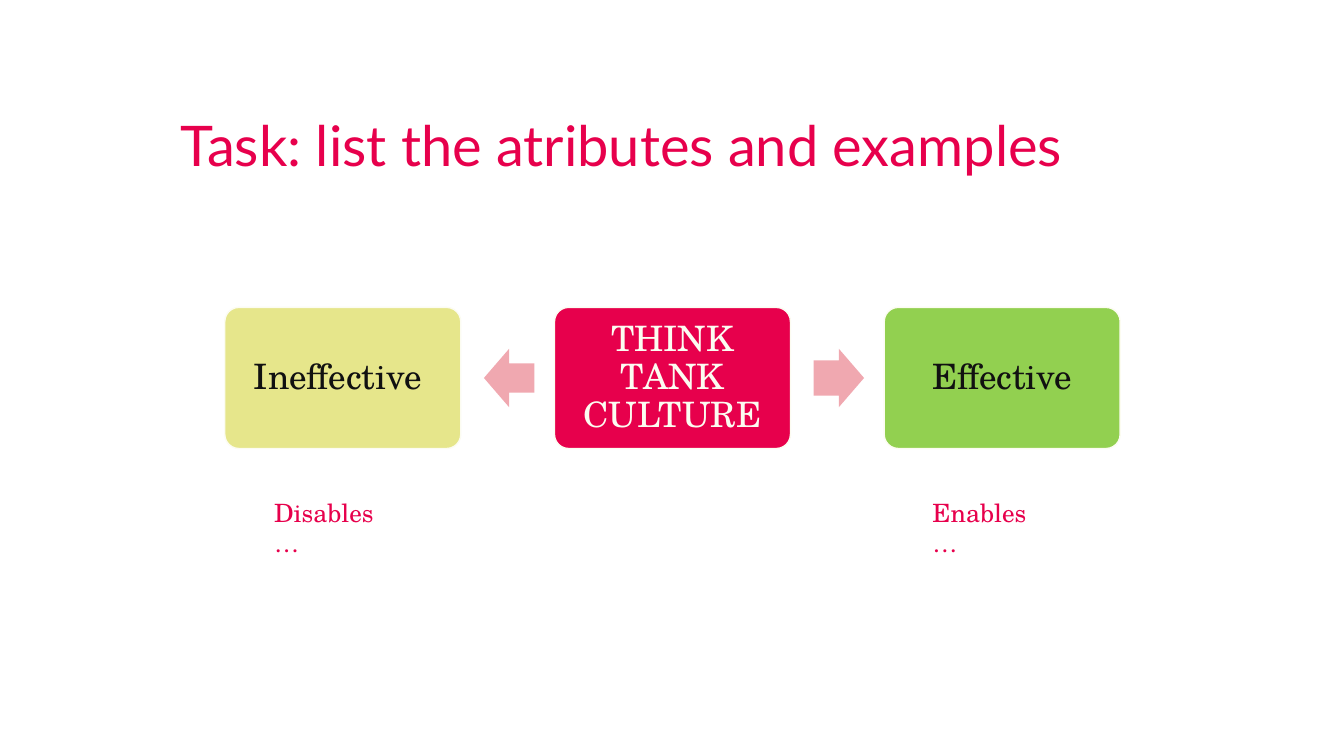
"""Build the think tank culture task slide."""
from pptx import Presentation
from pptx.dml.color import RGBColor
from pptx.enum.shapes import MSO_SHAPE
from pptx.enum.text import MSO_ANCHOR, PP_ALIGN
from pptx.util import Inches, Pt

CRIMSON = RGBColor(0xE7, 0x00, 0x4C)
PINK = RGBColor(0xF0, 0xA8, 0xB0)
YELLOW = RGBColor(0xE6, 0xE6, 0x8B)
GREEN = RGBColor(0x92, 0xD0, 0x50)
CREAM = RGBColor(0xFC, 0xFC, 0xF1)
INK = RGBColor(0x11, 0x11, 0x11)
SERIF = "TeX Gyre Schola"

TITLE = "Task: list the atributes and examples"
CARDS = [
    ("Ineffective ", YELLOW, INK),
    ("THINK TANK CULTURE", CRIMSON, CREAM),
    ("Effective", GREEN, INK),
]
ARROWS = [
    (MSO_SHAPE.LEFT_ARROW, 0.5),
    (MSO_SHAPE.RIGHT_ARROW, 0.6),
]
NOTES = [(2.62, 1.35, "Disables\v…"), (9.15, 1.29, "Enables\v…")]

CARD_LEFT, CARD_TOP, CARD_WIDTH, CARD_HEIGHT = 2.23, 3.05, 2.34, 1.4
CARD_STEP = 3.27
ARROW_LEFT, ARROW_WIDTH, ARROW_HEIGHT = 4.8, 0.5, 0.58
ARROW_TOP = CARD_TOP + (CARD_HEIGHT - ARROW_HEIGHT) / 2


def write(shape, text, *, size, color, font=SERIF, align=PP_ALIGN.LEFT,
          anchor=MSO_ANCHOR.TOP, spacing=1.0, inset=(0, 0)):
    frame = shape.text_frame
    frame.word_wrap = True
    frame.vertical_anchor = anchor
    frame.margin_left = frame.margin_right = Inches(inset[0])
    frame.margin_top = frame.margin_bottom = Inches(inset[1])
    para = frame.paragraphs[0]
    para.text = text
    para.alignment = align
    para.line_spacing = spacing
    for span in para.runs:
        span.font.name = font
        span.font.size = Pt(size)
        span.font.color.rgb = color


def add_block(page, kind, left, top, width, height, fill):
    block = page.shapes.add_shape(
        kind, Inches(left), Inches(top), Inches(width), Inches(height))
    block.shadow.inherit = False
    block.fill.solid()
    block.fill.fore_color.rgb = fill
    block.line.fill.background()
    return block


def add_label(page, left, top, width, height):
    return page.shapes.add_textbox(
        Inches(left), Inches(top), Inches(width), Inches(height))


def main():
    deck = Presentation()
    deck.slide_width, deck.slide_height = Inches(13.33), Inches(7.5)
    page = deck.slides.add_slide(deck.slide_layouts[6])

    title = add_label(page, 1.79, 1.17, 10.63, 0.7)
    write(title, TITLE, size=40, color=CRIMSON, font="Lato", spacing=0.9)

    for index, (text, fill, color) in enumerate(CARDS):
        card = add_block(page, MSO_SHAPE.ROUNDED_RECTANGLE,
                         CARD_LEFT + index * CARD_STEP, CARD_TOP,
                         CARD_WIDTH, CARD_HEIGHT, fill)
        card.adjustments[0] = 0.1
        card.line.color.rgb = CREAM
        card.line.width = Pt(1)
        write(card, text, size=25, color=color, align=PP_ALIGN.CENTER,
              anchor=MSO_ANCHOR.MIDDLE, spacing=0.9, inset=(0.1, 0.1))

    for index, (kind, shaft) in enumerate(ARROWS):
        arrow = add_block(page, kind, ARROW_LEFT + index * CARD_STEP,
                          ARROW_TOP, ARROW_WIDTH, ARROW_HEIGHT, PINK)
        arrow.adjustments[0] = shaft
        arrow.adjustments[1] = 0.5

    for left, width, text in NOTES:
        note = add_label(page, left, 4.88, width, 0.7)
        write(note, text, size=18, color=CRIMSON, inset=(0.1, 0.05))

    deck.save("out.pptx")


if __name__ == "__main__":
    main()
